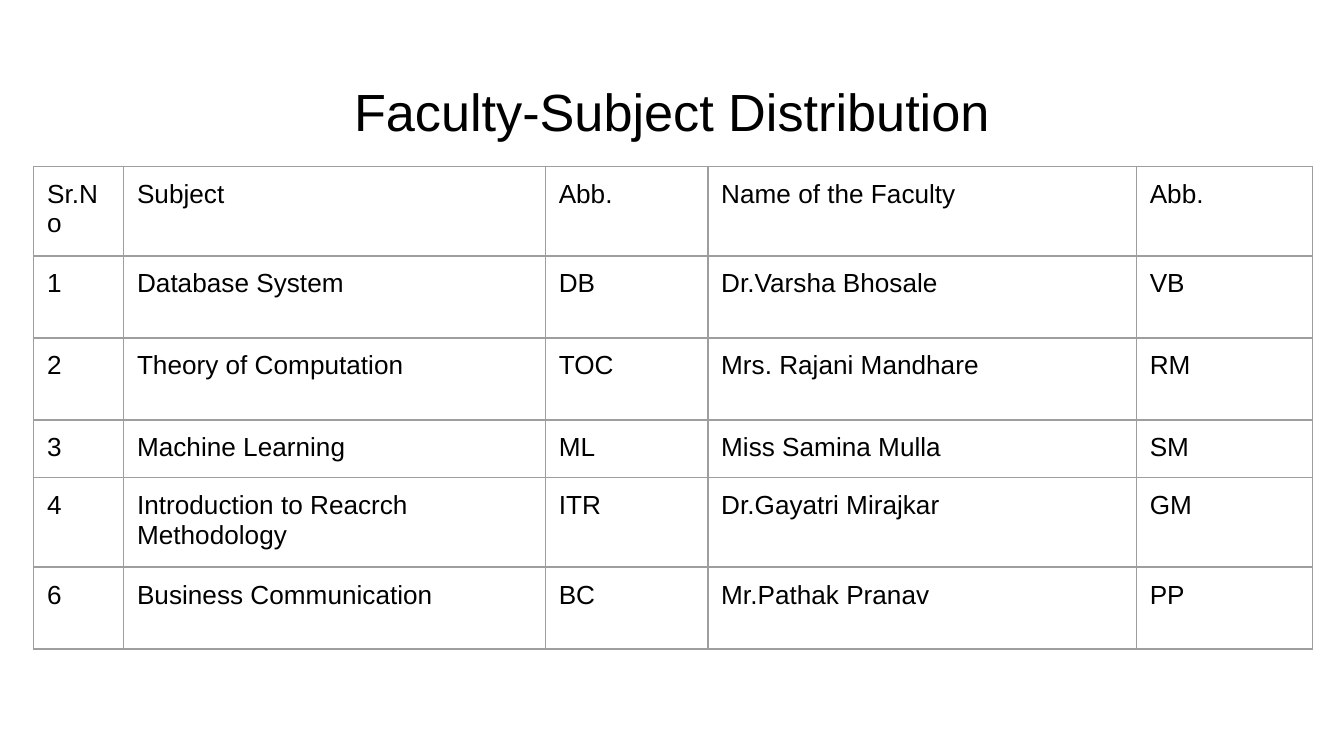
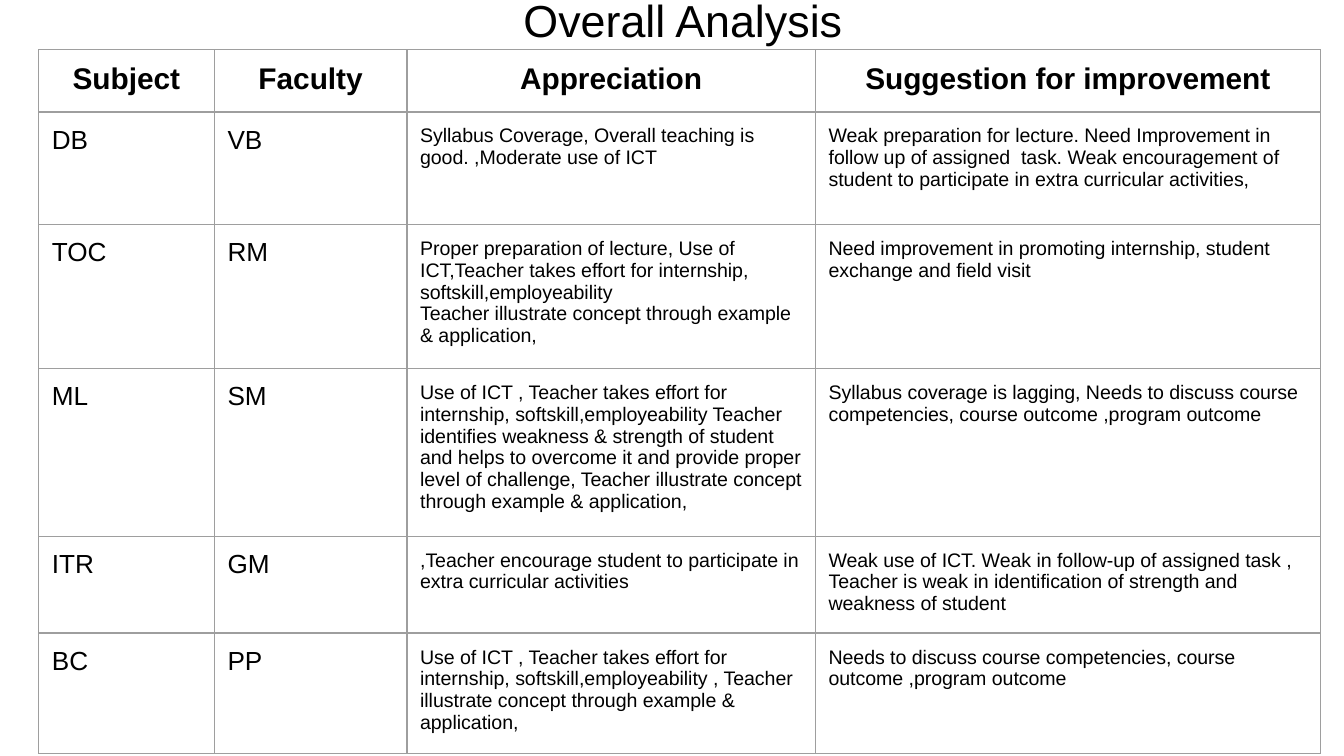
"""Build the two slides on faculty subjects and feedback analysis."""
from lxml import etree
from pptx import Presentation
from pptx import util as u
from pptx.dml.color import RGBColor
from pptx.enum import text
from pptx.oxml import ns

COLORS = {"background": "FFFFFF", "text": "000000", "border": "9E9E9E"}
FONT = "Arial"
INSET = u.Cm(0.25)
BORDER_WIDTH = u.Pt(0.75)

FACULTY_ROWS = [
    ["Sr.No", "Subject", "Abb.", "Name of the Faculty", "Abb."],
    ["1", "Database System", "DB", "Dr.Varsha Bhosale", "VB"],
    ["2", "Theory of Computation", "TOC", "Mrs. Rajani Mandhare", "RM"],
    ["3", "Machine Learning", "ML", "Miss Samina Mulla", "SM"],
    ["4", "Introduction to Reacrch Methodology", "ITR", "Dr.Gayatri Mirajkar", "GM"],
    ["6", "Business Communication", "BC", "Mr.Pathak Pranav", "PP"],
]

ANALYSIS_ROWS = [
    ["Subject", "Faculty", "Appreciation", "Suggestion for improvement"],
    ["DB", "VB",
     "Syllabus Coverage, Overall teaching is good. ,Moderate use of ICT",
     "Weak preparation for lecture. Need Improvement in follow up of assigned  task. "
     "Weak encouragement of student to participate in extra curricular activities,"],
    ["TOC", "RM",
     "Proper preparation of lecture, Use of ICT,Teacher takes effort for internship, "
     "softskill,employeability\n"
     "Teacher illustrate concept through example & application,",
     "Need improvement in promoting internship, student exchange and field visit"],
    ["ML", "SM",
     "Use of ICT , Teacher takes effort for internship, softskill,employeability "
     "Teacher identifies weakness & strength of student and helps to overcome it and "
     "provide proper level of challenge, Teacher illustrate concept through example "
     "& application,",
     "Syllabus coverage is lagging, Needs to discuss course competencies, "
     "course outcome ,program outcome"],
    ["ITR", "GM",
     ",Teacher encourage student to participate in extra curricular activities",
     "Weak use of ICT. Weak in follow-up of assigned task , Teacher is weak in "
     "identification of strength and weakness of student"],
    ["BC", "PP",
     "Use of ICT , Teacher takes effort for internship, softskill,employeability , "
     "Teacher illustrate concept through example & application,",
     "Needs to discuss course competencies, course outcome ,program outcome"],
]


def style_text(frame, size, bold=False, centered=False):
    """Format every paragraph and run of a text frame."""
    for para in frame.paragraphs:
        para.alignment = text.PP_ALIGN.CENTER if centered else text.PP_ALIGN.LEFT
        for span in para.runs:
            span.font.name = FONT
            span.font.size = u.Pt(size)
            span.font.bold = bold
            span.font.color.rgb = RGBColor.from_string(COLORS["text"])


def add_borders(cell):
    """Draw the thin grey line on all four sides of a cell."""
    properties = cell._tc.get_or_add_tcPr()
    for side in ("lnL", "lnR", "lnT", "lnB"):
        line = etree.SubElement(properties, ns.qn(f"a:{side}"), w=str(BORDER_WIDTH))
        fill = etree.SubElement(line, ns.qn("a:solidFill"))
        etree.SubElement(fill, ns.qn("a:srgbClr"), val=COLORS["border"])


def add_page(deck):
    """Add a blank page with the shared background."""
    page = deck.slides.add_slide(deck.slide_layouts[6])
    page.background.fill.solid()
    page.background.fill.fore_color.rgb = RGBColor.from_string(COLORS["background"])
    return page


def add_title(page, box, wording, size):
    """Add a centred title in the given box."""
    frame = page.shapes.add_textbox(*map(u.Cm, box)).text_frame
    frame.word_wrap = True
    frame.margin_left = frame.margin_right = INSET
    frame.margin_top = frame.margin_bottom = INSET
    frame.text = wording
    style_text(frame, size, centered=True)


def add_grid(page, corner, widths, heights, rows, cell_style):
    """Add a bordered table whose cell_style gives size, bold and centring."""
    box = (*corner, sum(widths), sum(heights))
    table = page.shapes.add_table(len(rows), len(widths), *map(u.Cm, box)).table
    table.first_row = table.horz_banding = False
    for column, width in zip(table.columns, widths):
        column.width = u.Cm(width)
    for row, height in zip(table.rows, heights):
        row.height = u.Cm(height)
    for row_index, row in enumerate(rows):
        for column_index, wording in enumerate(row):
            cell = table.cell(row_index, column_index)
            cell.margin_left = cell.margin_right = INSET
            cell.margin_top = cell.margin_bottom = INSET
            cell.text_frame.text = wording
            style_text(cell.text_frame, *cell_style(row_index, column_index))
            add_borders(cell)
            cell.fill.background()


def faculty_style(row, column):
    """Give the one style of the faculty table."""
    return 14, False, False


def analysis_style(row, column):
    """Give bold headings, plain abbreviations and small remarks."""
    if row == 0:
        return 16, True, True
    return (14 if column < 2 else 10.5), False, False


def build_faculty(deck):
    """Build the page that lists subjects and their faculty."""
    page = add_page(deck)
    add_title(page, (0.86, 1.24, 23.67, 1.6), "Faculty-Subject Distribution", 28)
    add_grid(page, (0.64, 3.15), [1.7, 7.97, 3.07, 8.1, 3.32],
             [1.55, 1.55, 1.55, 1.02, 1.55, 1.55], FACULTY_ROWS, faculty_style)


def build_analysis(deck):
    """Build the page with appreciation and suggestions per subject."""
    page = add_page(deck)
    add_title(page, (0.41, -0.38, 24.99, 1.09), "Overall Analysis", 24)
    add_grid(page, (0.73, 0.94), [3.32, 3.64, 7.72, 9.55],
             [1.17, 2.13, 2.7, 3.15, 1.83, 2.26], ANALYSIS_ROWS, analysis_style)


def main():
    """Create the deck and save it."""
    deck = Presentation()
    deck.slide_width, deck.slide_height = u.Cm(25.4), u.Cm(14.29)
    build_faculty(deck)
    build_analysis(deck)
    deck.save("out.pptx")


if __name__ == "__main__":
    main()
